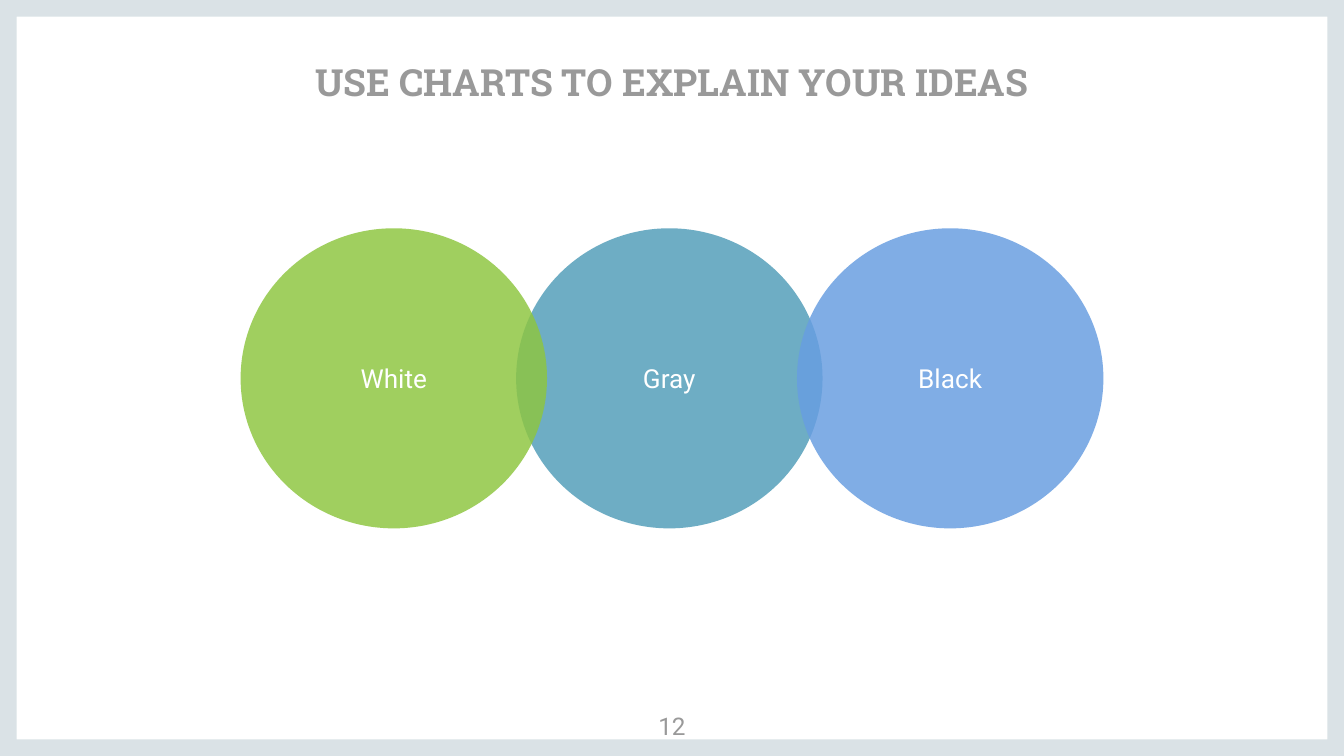
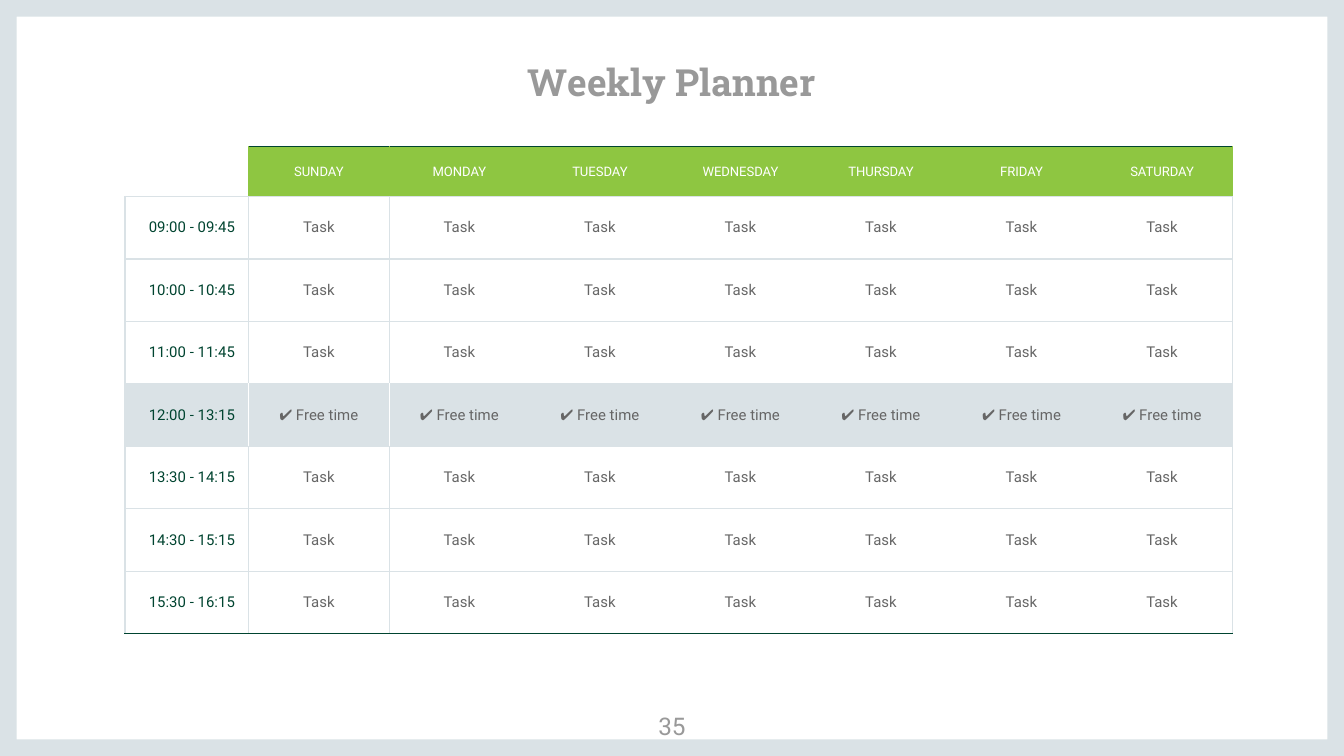
from dataclasses import dataclass

from lxml.etree import SubElement
from pptx import Presentation
from pptx.dml.color import RGBColor
from pptx.enum.shapes import MSO_SHAPE
from pptx.enum.text import MSO_ANCHOR, PP_ALIGN
from pptx.oxml.ns import qn
from pptx.util import Inches, Pt


@dataclass(frozen=True)
class Theme:
    body: str = "Roboto"
    head: str = "Roboto Slab"
    white: str = "FFFFFF"
    pale: str = "DAE2E6"
    gray: str = "999999"
    ink: str = "666666"
    pine: str = "004430"
    green: str = "8EC641"
    teal: str = "539EB9"
    blue: str = "689EE1"
    title: float = 20
    label: float = 14
    number: float = 13
    task: float = 8
    day: float = 7
    rule: float = 0.75
    alpha: int = 84


THEME = Theme()
WIDE, HIGH = Inches(10), Inches(5.625)
PAD = Inches(0.1)
DAYS = ["SUNDAY", "MONDAY", "TUESDAY", "WEDNESDAY", "THURSDAY", "FRIDAY", "SATURDAY"]
HOURS = ["09:00 - 09:45", "10:00 - 10:45", "11:00 - 11:45", "12:00 - 13:15",
         "13:30 - 14:15", "14:30 - 15:15", "15:30 - 16:15"]
BREAK = "12:00 - 13:15"
NO_STYLE = "{2D5ABB26-0587-4C30-8999-92F81FD0307C}"


def across(share):
    return round(WIDE * share / 100)


def down(share):
    return round(HIGH * share / 100)


def place(left, top, width, height):
    return across(left), down(top), across(width), down(height)


def pad(item):
    item.margin_left = item.margin_right = PAD
    item.margin_top = item.margin_bottom = PAD


def write(frame, text, size, color, font=THEME.body, align=PP_ALIGN.CENTER, bold=False):
    frame.text = text
    para = frame.paragraphs[0]
    para.alignment = align
    for run in para.runs:
        run.font.name = font
        run.font.size = Pt(size)
        run.font.bold = bold
        run.font.color.rgb = RGBColor.from_string(color)


def label(slide, box, text, size, color, anchor=MSO_ANCHOR.TOP, **style):
    frame = slide.shapes.add_textbox(*place(*box)).text_frame
    frame.word_wrap = True
    frame.vertical_anchor = anchor
    pad(frame)
    write(frame, text, size, color, **style)


def solid(slide, kind, box, color):
    shape = slide.shapes.add_shape(kind, *place(*box))
    shape.shadow.inherit = False
    shape.fill.solid()
    shape.fill.fore_color.rgb = RGBColor.from_string(color)
    shape.line.fill.background()
    return shape


def page(deck, title, number):
    slide = deck.slides.add_slide(deck.slide_layouts[6])
    border = solid(slide, MSO_SHAPE.FRAME, (0, 0, 100, 100), THEME.pale)
    border.adjustments[0] = 0.022
    label(slide, (5, 5.5, 90, 10), title, THEME.title, THEME.gray,
          anchor=MSO_ANCHOR.BOTTOM, font=THEME.head, bold=True)
    label(slide, (47.5, 92.3, 5, 7.7), number, THEME.number, THEME.gray)
    return slide


def circle(slide, left, text, color):
    shape = solid(slide, MSO_SHAPE.OVAL, (left, 30.2, 22.8, 39.7), color)
    tint = shape._element.spPr.find(qn("a:solidFill"))[0]
    SubElement(tint, qn("a:alpha"), val=str(THEME.alpha * 1000))
    frame = shape.text_frame
    frame.vertical_anchor = MSO_ANCHOR.MIDDLE
    pad(frame)
    write(frame, text, THEME.label, THEME.white)


def edge(cell, **sides):
    props = cell._tc.get_or_add_tcPr()
    for side in "LRTB":
        if color := sides.get(side):
            line = SubElement(props, qn("a:ln" + side), w=str(Pt(THEME.rule)))
            fill = SubElement(line, qn("a:solidFill"))
            SubElement(fill, qn("a:srgbClr"), val=color)


def paint(cell, color):
    if color:
        cell.fill.solid()
        cell.fill.fore_color.rgb = RGBColor.from_string(color)
    else:
        cell.fill.background()


def entry(cell, text, size, color, fill=None, align=PP_ALIGN.CENTER, **sides):
    pad(cell)
    cell.vertical_anchor = MSO_ANCHOR.MIDDLE
    write(cell.text_frame, text, size, color, align=align)
    edge(cell, **sides)
    paint(cell, fill)


def header(table):
    corner = table.cell(0, 0)
    pad(corner)
    para = corner.text_frame.paragraphs[0]
    SubElement(para._p, qn("a:endParaRPr"), sz=str(THEME.day * 100))
    edge(corner, R=THEME.green, B=THEME.pale)
    paint(corner, None)
    for col, day in enumerate(DAYS, 1):
        entry(table.cell(0, col), day, THEME.day, THEME.white, THEME.green,
              L=THEME.green if col == 1 else None,
              R=THEME.green if col == len(DAYS) else None,
              T=THEME.pine, B=THEME.pale)


def hour(table, row, time):
    rest = time == BREAK
    fill = THEME.pale if rest else None
    split = THEME.white if rest else THEME.pale
    base = THEME.pine if row == len(HOURS) else THEME.pale
    entry(table.cell(row, 0), time, THEME.task, THEME.pine, fill,
          PP_ALIGN.RIGHT, L=THEME.pale, R=split, T=THEME.pale, B=base)
    for col in range(1, len(DAYS) + 1):
        entry(table.cell(row, col), "✔ Free time" if rest else "Task",
              THEME.task, THEME.ink, fill,
              L=split if col == 1 else None,
              R=THEME.pale if col == len(DAYS) else None,
              T=THEME.pale, B=base)


def planner(slide):
    cols = [9.2] + [10.46] * len(DAYS)
    rows = [6.6] + [8.26] * len(HOURS)
    box = place(9.3, 19.4, sum(cols), sum(rows))
    table = slide.shapes.add_table(len(rows), len(cols), *box).table
    table.first_row = table.horz_banding = False
    table._tbl.tblPr.find(qn("a:tableStyleId")).text = NO_STYLE
    for col, width in zip(table.columns, cols):
        col.width = across(width)
    for row, height in zip(table.rows, rows):
        row.height = down(height)
    header(table)
    for row, time in enumerate(HOURS, 1):
        hour(table, row, time)


def main():
    deck = Presentation()
    deck.slide_width, deck.slide_height = WIDE, HIGH
    chart = page(deck, "USE CHARTS TO EXPLAIN YOUR IDEAS", "12")
    circle(chart, 38.4, "Gray", THEME.teal)
    circle(chart, 17.9, "White", THEME.green)
    circle(chart, 59.3, "Black", THEME.blue)
    planner(page(deck, "Weekly Planner", "35"))
    deck.save("out.pptx")


if __name__ == "__main__":
    main()
